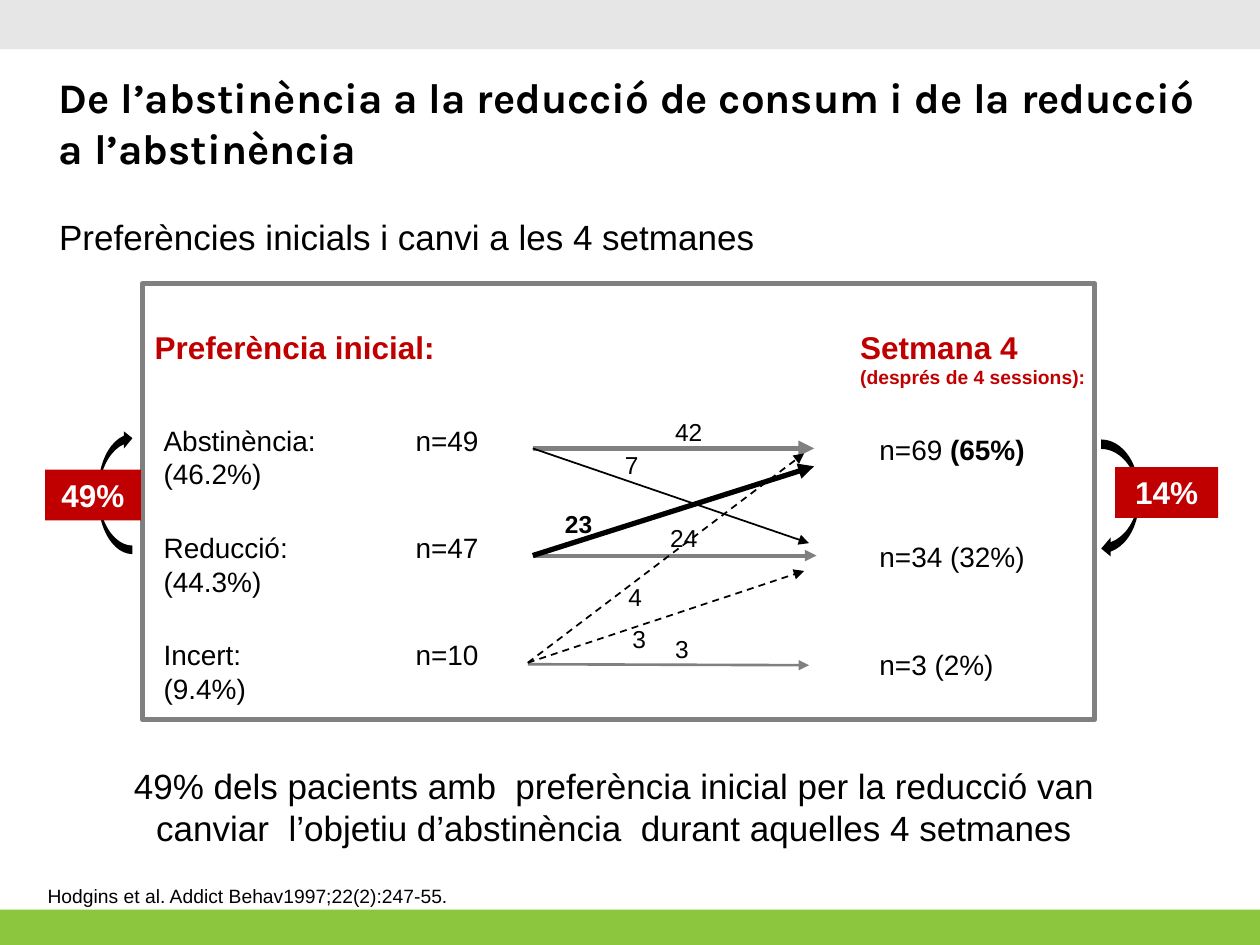
from dataclasses import dataclass

from lxml import etree
from pptx import Presentation
from pptx import util as u
from pptx.dml.color import RGBColor
from pptx.enum import dml, shapes, text
from pptx.oxml import ns

BLACK, WHITE, GRAY, RED = "000000", "FFFFFF", "808080", "C00000"
GREEN, LIGHT_GRAY = "8CC63E", "E6E6E6"
LEFT, CENTER = text.PP_ALIGN.LEFT, text.PP_ALIGN.CENTER
RECTANGLE = shapes.MSO_SHAPE.RECTANGLE
CURVED_ARROW = shapes.MSO_SHAPE.CURVED_LEFT_ARROW


@dataclass
class Box:
    """Position and size in centimetres."""
    left: float
    top: float
    width: float
    height: float

    def lengths(self) -> list:
        return [u.Cm(value) for value in (self.left, self.top, self.width, self.height)]


@dataclass
class Run:
    words: str
    size: float
    color: str = BLACK
    bold: bool = False
    font: str = "Arial"


@dataclass
class Flow:
    """Arrow from an initial preference to a week 4 preference."""
    x1: float
    y1: float
    x2: float
    y2: float
    weight: float
    color: str = BLACK
    dashed: bool = False


@dataclass
class FlowLabel:
    left: float
    top: float
    words: str
    align: text.PP_ALIGN = LEFT
    bold: bool = False


@dataclass
class Change:
    """Curved arrow with its percentage badge."""
    arrow: Box
    rotation: float
    badge: Box
    words: str


def hex_color(value: str) -> RGBColor:
    return RGBColor.from_string(value)


def write(shape, lines: list[list[Run]], align=LEFT, wrap=True, grow=True,
          anchor=text.MSO_ANCHOR.TOP, tab: float = 0) -> None:
    """Fill one paragraph, with a line break between the lines."""
    frame = shape.text_frame
    frame.word_wrap = wrap
    frame.vertical_anchor = anchor
    if grow:
        frame.auto_size = text.MSO_AUTO_SIZE.SHAPE_TO_FIT_TEXT
    paragraph = frame.paragraphs[0]
    paragraph.alignment = align
    if tab:
        tabs = etree.SubElement(paragraph._p.get_or_add_pPr(), ns.qn("a:tabLst"))
        etree.SubElement(tabs, ns.qn("a:tab"), pos=str(u.Cm(tab)), algn="l")
    for index, line in enumerate(lines):
        if index:
            paragraph.add_line_break()
        for item in line:
            run = paragraph.add_run()
            run.text = item.words
            run.font.name = item.font
            run.font.size = u.Pt(item.size)
            run.font.bold = item.bold
            run.font.color.rgb = hex_color(item.color)


def add_text(slide, box: Box, lines: list[list[Run]], **options) -> None:
    write(slide.shapes.add_textbox(*box.lengths()), lines, **options)


def add_shape(slide, kind, box: Box, fill: str = "", line: str = ""):
    shape = slide.shapes.add_shape(kind, *box.lengths())
    shape.shadow.inherit = False
    if fill:
        shape.fill.solid()
        shape.fill.fore_color.rgb = hex_color(fill)
    else:
        shape.fill.background()
    if line:
        shape.line.color.rgb = hex_color(line)
        shape.line.width = u.Pt(3)
    else:
        shape.line.fill.background()
    return shape


def add_flow(slide, flow: Flow) -> None:
    ends = [u.Cm(value) for value in (flow.x1, flow.y1, flow.x2, flow.y2)]
    connector = slide.shapes.add_connector(shapes.MSO_CONNECTOR.STRAIGHT, *ends)
    connector.line.color.rgb = hex_color(flow.color)
    connector.line.width = u.Pt(flow.weight)
    if flow.dashed:
        connector.line.dash_style = dml.MSO_LINE.DASH
    etree.SubElement(connector.line._get_or_add_ln(), ns.qn("a:tailEnd"), type="triangle")
    etree.SubElement(connector._element.spPr, ns.qn("a:effectLst"))


def add_change(slide, change: Change) -> None:
    arrow = add_shape(slide, CURVED_ARROW, change.arrow, BLACK)
    arrow.rotation = change.rotation
    badge = add_shape(slide, RECTANGLE, change.badge, RED)
    write(badge, [[Run(change.words, 18, WHITE, True)]], align=CENTER)


PREFERENCES = [("Abstinència: ", "n=49 ", "(46.2%)"),
               ("Reducció: ", "n=47 ", "(44.3%)"),
               ("Incert: ", "n=10 ", "(9.4%)")]
OUTCOMES = [("n=69 ", "(65%)", 3.48), ("n=34 (32%)", "", 3.48), ("n=3 (2%)", "", 2.84)]
FLOWS = [Flow(10.77, 11.2, 16.46, 11.2, 2.25, GRAY),
         Flow(10.74, 9.04, 16.41, 9.04, 3, GRAY),
         Flow(10.64, 13.39, 16.31, 13.41, 1.5, GRAY),
         Flow(10.74, 11.2, 16.41, 9.4, 3),
         Flow(10.74, 9.04, 16.31, 10.95, 1),
         Flow(10.64, 13.36, 16.21, 9.14, 1, dashed=True),
         Flow(10.64, 13.36, 16.21, 11.51, 1, dashed=True)]
FLOW_LABELS = [FlowLabel(13.36, 8.28, "42"), FlowLabel(12.34, 8.94, "7", CENTER),
               FlowLabel(11.13, 10.13, "23", CENTER, True), FlowLabel(13.26, 10.41, "24"),
               FlowLabel(13.36, 12.65, "3"), FlowLabel(12.42, 11.61, "4"),
               FlowLabel(12.5, 12.45, "3")]
CHANGES = [Change(Box(1.98, 8.66, 0.69, 2.51), 180, Box(0.91, 9.47, 1.93, 1.02), "49%"),
           Change(Box(22.2, 8.86, 0.76, 2.39), 0, Box(22.48, 9.42, 2.08, 1.02), "14%")]


def main() -> None:
    presentation = Presentation()
    presentation.slide_width, presentation.slide_height = u.Cm(25.4), u.Cm(19.05)
    slide = presentation.slides.add_slide(presentation.slide_layouts[6])

    # Page bands and diagram frame
    add_shape(slide, RECTANGLE, Box(0, 18.34, 25.4, 0.79), GREEN)
    add_shape(slide, RECTANGLE, Box(0, -0.08, 25.4, 1.07), LIGHT_GRAY)
    add_shape(slide, RECTANGLE, Box(2.87, 5.72, 19.2, 8.79), line=GRAY)

    # Title and subtitle
    title = "De l’abstinència a la reducció de consum i de la reducció a l’abstinència"
    add_text(slide, Box(0.94, 1.32, 23.77, 2.31), [[Run(title, 24, bold=True, font="Karla")]])
    subtitle = add_shape(slide, shapes.MSO_SHAPE.ROUNDED_RECTANGLE, Box(0.89, 4.22, 21.13, 1.09))
    write(subtitle, [[Run("Preferències inicials i canvi a les 4 setmanes", 20)]],
          grow=False, anchor=text.MSO_ANCHOR.MIDDLE)

    # Column headings
    add_text(slide, Box(2.87, 6.48, 6.22, 1.02),
             [[Run("Preferència inicial:", 18, RED, True)]], wrap=False)
    add_text(slide, Box(17.09, 6.48, 5.08, 1.5),
             [[Run("Setmana 4", 18, RED, True)],
              [Run("(després de 4 sessions):", 11, RED, True)]], wrap=False)

    # Initial preferences and week 4 outcomes
    for row, (name, count, share) in enumerate(PREFERENCES):
        add_text(slide, Box(3.05, 8.41 + 2.16 * row, 9.09, 1.63),
                 [[Run(f"{name}\t{count}", 16)], [Run(share, 16)]], tab=5.08)
    for row, (count, share, width) in enumerate(OUTCOMES):
        runs = [Run(count, 16)] + ([Run(share, 16, bold=True)] if share else [])
        add_text(slide, Box(17.48, 8.59 + 2.17 * row, width, 0.94), [runs], wrap=False)

    # Flows between preferences
    for flow in FLOWS:
        add_flow(slide, flow)
    for label in FLOW_LABELS:
        width = 0.79 if len(label.words) == 1 else 1.07
        add_text(slide, Box(label.left, label.top, width, 0.86),
                 [[Run(label.words, 14, bold=label.bold)]], align=label.align, wrap=False)
    for change in CHANGES:
        add_change(slide, change)

    # Conclusion and reference
    conclusion = ("49% dels pacients amb  preferència inicial per la reducció van "
                  "canviar  l’objetiu d’abstinència  durant aquelles 4 setmanes")
    add_text(slide, Box(2.16, 15.29, 20.45, 1.96), [[Run(conclusion, 20)]], align=CENTER)
    add_text(slide, Box(0.71, 17.7, 9.98, 0.43),
             [[Run("Hodgins et al. Addict Behav1997;22(2):247-55.", 11)]], grow=False)

    presentation.save("out.pptx")


if __name__ == "__main__":
    main()
